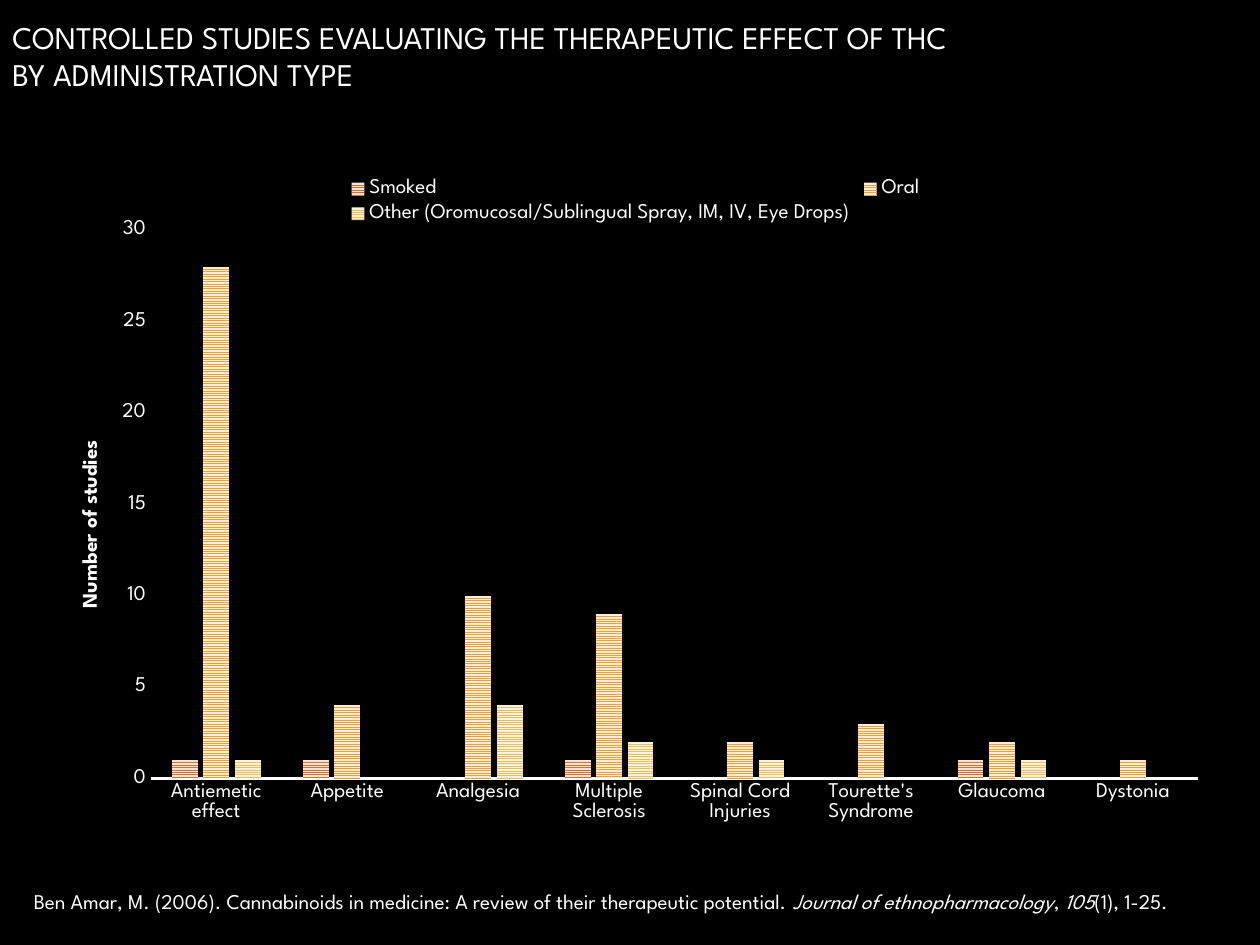
from dataclasses import dataclass

from lxml.etree import SubElement
from pptx import Presentation
from pptx.chart.data import CategoryChartData
from pptx.dml.color import RGBColor
from pptx.enum.chart import XL_CHART_TYPE, XL_LEGEND_POSITION, XL_TICK_MARK
from pptx.enum.dml import MSO_PATTERN
from pptx.enum.text import MSO_ANCHOR
from pptx.oxml.ns import qn
from pptx.util import Inches, Pt


@dataclass(frozen=True)
class Theme:
    font: str = "League Spartan"
    background: RGBColor = RGBColor(0, 0, 0)
    text: RGBColor = RGBColor(255, 255, 255)
    title_size: Pt = Pt(18)
    body_size: Pt = Pt(12)
    stripes: tuple = (("CF7133", "F5E3D6"), ("E9A039", "FBECD7"), ("E7BF5F", "FAF2DF"))


THEME = Theme()
TITLE_LINES = (
    "CONTROLLED STUDIES EVALUATING THE THERAPEUTIC EFFECT OF THC",
    "BY ADMINISTRATION TYPE",
)
CATEGORIES = (
    "Antiemetic effect", "Appetite", "Analgesia", "Multiple Sclerosis",
    "Spinal Cord Injuries", "Tourette's Syndrome", "Glaucoma", "Dystonia",
)
STUDIES = {
    "Smoked": (1, 1, 0, 1, 0, 0, 1, 0),
    "Oral": (28, 4, 10, 9, 2, 3, 2, 1),
    "Other (Oromucosal/Sublingual Spray, IM, IV, Eye Drops)": (1, 0, 4, 2, 1, 0, 1, 0),
}
CITATION = (
    ("Ben Amar, M. (2006). Cannabinoids in medicine: "
     "A review of their therapeutic potential. ", False),
    ("Journal of ethnopharmacology", True),
    (", ", False),
    ("105", True),
    ("(1), 1-25.", False),
)


def style_font(font, size, bold=False, italic=False):
    font.name = THEME.font
    font.size = size
    font.bold = bold
    font.italic = italic
    font.color.rgb = THEME.text


def add_text_frame(slide, box):
    frame = slide.shapes.add_textbox(*box).text_frame
    frame.word_wrap = True
    return frame


def add_title(slide, box):
    frame = add_text_frame(slide, box)
    frame.vertical_anchor = MSO_ANCHOR.MIDDLE
    paragraph = frame.paragraphs[0]
    for index, line in enumerate(TITLE_LINES):
        if index:
            paragraph.add_line_break()
        run = paragraph.add_run()
        run.text = line
        style_font(run.font, THEME.title_size)


def add_citation(slide, box):
    paragraph = add_text_frame(slide, box).paragraphs[0]
    for text, italic in CITATION:
        run = paragraph.add_run()
        run.text = text
        style_font(run.font, THEME.body_size, italic=italic)


def set_layout(parent, position, **values):
    """Place a chart part by fractions of the chart; position is its child index."""
    for old_layout in parent.findall(qn("c:layout")):
        parent.remove(old_layout)
    layout = SubElement(parent, qn("c:layout"))
    parent.insert(position, layout)
    manual = SubElement(layout, qn("c:manualLayout"))
    for name, value in values.items():
        SubElement(manual, qn(f"c:{name}")).set("val", str(value))


def style_axes(chart):
    for axis in (chart.category_axis, chart.value_axis):
        axis.has_major_gridlines = False
        axis.major_tick_mark = axis.minor_tick_mark = XL_TICK_MARK.NONE
        style_font(axis.tick_labels.font, THEME.body_size)

    category_line = chart.category_axis.format.line
    category_line.width = Pt(1.5)
    category_line.color.rgb = THEME.text

    value_axis = chart.value_axis
    value_axis.minimum_scale, value_axis.maximum_scale = 0, 30
    value_axis.major_unit = 5
    value_axis.format.line.fill.background()
    title = value_axis.axis_title
    run = title.text_frame.paragraphs[0].add_run()
    run.text = "Number of studies"
    style_font(run.font, THEME.body_size, bold=True)
    set_layout(title.text_frame._txBody.getparent().getparent(), 1,
               xMode="edge", yMode="edge", x=0.02, y=0.39)


def add_studies_chart(slide, box):
    data = CategoryChartData()
    data.categories = CATEGORIES
    for name, values in STUDIES.items():
        data.add_series(name, values)
    chart = slide.shapes.add_chart(XL_CHART_TYPE.COLUMN_CLUSTERED, *box, data).chart
    chart.has_title = False
    style_font(chart.font, THEME.body_size)

    chart.has_legend = True
    chart.legend.position = XL_LEGEND_POSITION.TOP
    chart.legend.include_in_layout = False
    style_font(chart.legend.font, THEME.body_size)

    plot = chart.plots[0]
    plot.vary_by_categories = False
    plot.gap_width = 164
    plot.overlap = -22
    for series, (stripe, ground) in zip(plot.series, THEME.stripes):
        fill = series.format.fill
        fill.patterned()
        fill.pattern = MSO_PATTERN.NARROW_HORIZONTAL
        fill.fore_color.rgb = RGBColor.from_string(stripe)
        fill.back_color.rgb = RGBColor.from_string(ground)

    style_axes(chart)
    set_layout(chart._chartSpace.chart.plotArea, 0, layoutTarget="inner",
               xMode="edge", yMode="edge", x=0.084, y=0.094, w=0.899, h=0.788)


def main():
    presentation = Presentation()
    presentation.slide_width, presentation.slide_height = Inches(10), Inches(7.5)
    slide = presentation.slides.add_slide(presentation.slide_layouts[6])
    background = slide.background.fill
    background.solid()
    background.fore_color.rgb = THEME.background

    add_title(slide, (Inches(0), Inches(-0.04), Inches(8.17), Inches(0.96)))
    add_studies_chart(slide, (Inches(0.42), Inches(1.31), Inches(9.25), Inches(5.52)))
    add_citation(slide, (Inches(0.17), Inches(7), Inches(9.75), Inches(0.5)))
    presentation.save("out.pptx")


if __name__ == "__main__":
    main()
